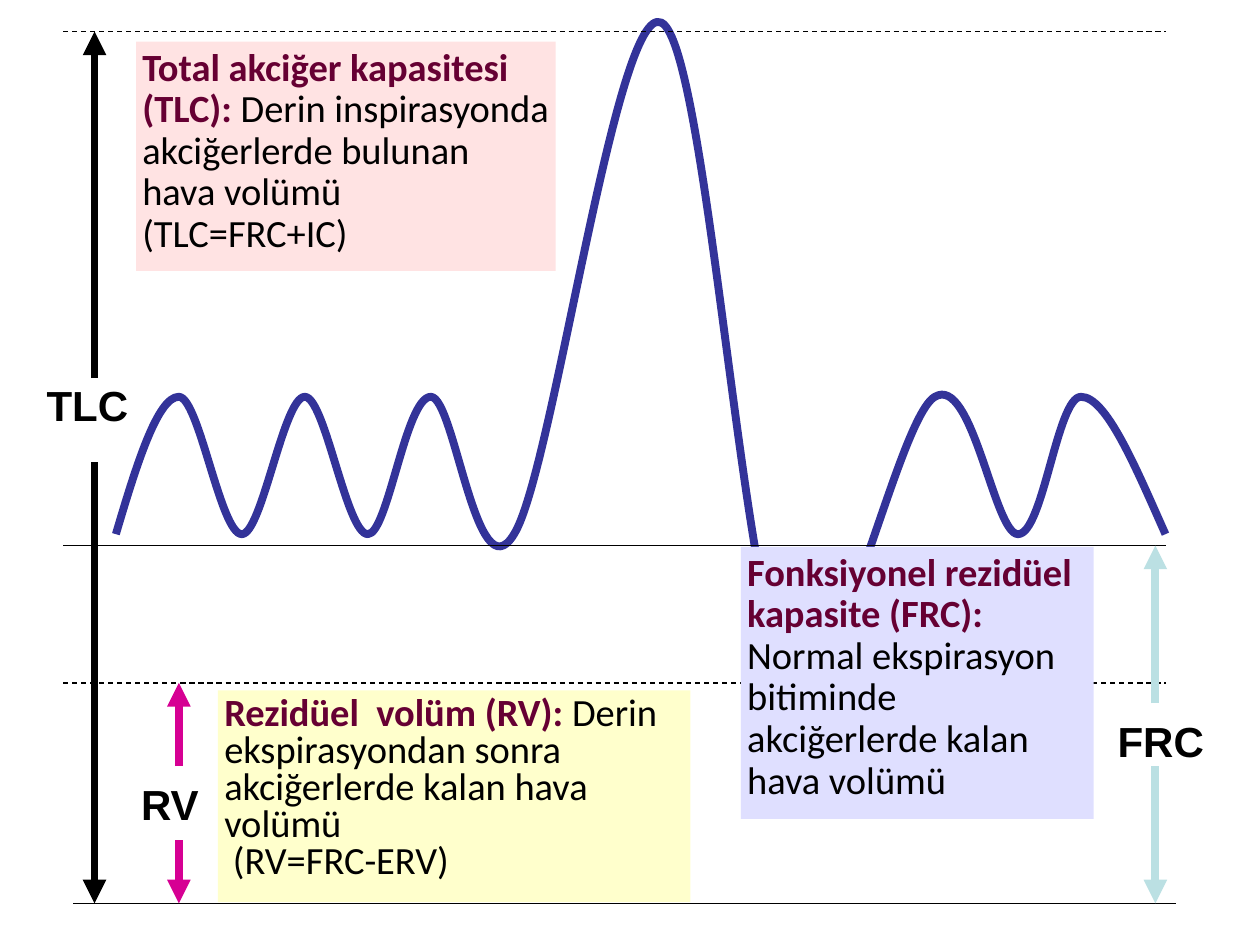
from lxml.etree import SubElement
from pptx import Presentation
from pptx.dml.color import RGBColor
from pptx.enum.dml import MSO_LINE
from pptx.enum.shapes import MSO_CONNECTOR, MSO_SHAPE
from pptx.enum.text import MSO_ANCHOR, MSO_AUTO_SIZE, PP_ALIGN
from pptx.oxml.ns import qn
from pptx.util import Inches, Pt

BLACK = RGBColor(0x00, 0x00, 0x00)
NAVY = RGBColor(0x33, 0x33, 0x99)
WINE = RGBColor(0x66, 0x00, 0x33)
MAGENTA = RGBColor(0xD6, 0x00, 0x93)
TEAL = RGBColor(0xBB, 0xE0, 0xE3)
PINK = RGBColor(0xFF, 0xE3, 0xE3)
YELLOW = RGBColor(0xFF, 0xFF, 0xCC)
LILAC = RGBColor(0xDF, 0xDF, 0xFF)

# Lung levels, from full to empty
FULL, REST, RESID, EMPTY = 0.25, 4.33, 5.42, 7.17

# Start of the breathing curve, then two controls and an end per segment
START = (0.92, 4.24)
WAVE = [
    (1.08, 3.7), (1.25, 3.15), (1.42, 3.15),
    (1.58, 3.15), (1.75, 4.24), (1.92, 4.24),
    (2.08, 4.24), (2.25, 3.15), (2.42, 3.15),
    (2.58, 3.15), (2.75, 4.24), (2.92, 4.24),
    (3.08, 4.24), (3.22, 3.15), (3.42, 3.15),
    (3.61, 3.15), (3.78, 4.74), (4.08, 4.24),
    (4.39, 3.75), (4.89, 0), (5.25, 0.18),
    (5.61, 0.36), (5.89, 4.84), (6.25, 5.34),
    (6.61, 5.83), (7.11, 3.33), (7.42, 3.15),
    (7.72, 2.97), (7.89, 4.24), (8.08, 4.24),
    (8.28, 4.24), (8.39, 3.15), (8.58, 3.15),
    (8.78, 3.15), (9.01, 3.7), (9.25, 4.24),
]


def add_curve(slide):
    # The builder rounds to whole units, so points are given in EMU
    start, *wave = [(Inches(x), Inches(y)) for x, y in (START, *WAVE)]
    pen = slide.shapes.build_freeform(*start)
    pen.add_line_segments(wave, close=False)
    curve = pen.convert_to_shape()
    curve.shadow.inherit = False
    curve.fill.background()
    curve.line.color.rgb = NAVY
    curve.line.width = Pt(4.5)
    # Join each three straight steps into one Bezier segment
    steps = list(curve.element.iter(qn("a:lnTo")))
    for i in range(0, len(steps), 3):
        bezier = SubElement(steps[i].getparent(), qn("a:cubicBezTo"))
        for step in steps[i:i + 3]:
            bezier.append(step[0])
            step.getparent().remove(step)


def add_line(slide, start, end, color=BLACK, width=0.75, dash=False, arrow=False):
    ends = [Inches(v) for v in (*start, *end)]
    line = slide.shapes.add_connector(MSO_CONNECTOR.STRAIGHT, *ends)
    line.line.color.rgb = color
    line.line.width = Pt(width)
    if dash:
        line.line.dash_style = MSO_LINE.DASH
    props = line.element.spPr
    if arrow:
        SubElement(props.find(qn("a:ln")), qn("a:tailEnd"), type="triangle")
    SubElement(props, qn("a:effectLst"))


def set_frame(frame, wrap):
    frame.margin_left = frame.margin_right = Inches(0.05)
    frame.margin_top = frame.margin_bottom = Inches(0.05)
    frame.vertical_anchor = MSO_ANCHOR.TOP
    frame.word_wrap = wrap
    frame.auto_size = MSO_AUTO_SIZE.SHAPE_TO_FIT_TEXT


def add_label(slide, text, left, top, width):
    box = slide.shapes.add_textbox(*map(Inches, (left, top, width, 0.48)))
    set_frame(box.text_frame, False)
    para = box.text_frame.paragraphs[0]
    para.text = text
    para.font.name = "Arial"
    para.font.size = Pt(24)
    para.font.bold = True
    para.font.color.rgb = BLACK


def add_span(slide, x, top, bottom, gap, color):
    """Two arrows that point away from the gap left for a label."""
    for start, end in zip(gap, (top, bottom)):
        add_line(slide, (x, start), (x, end), color, 4.5, arrow=True)


def add_note(slide, place, fill, spacing, *paras):
    box = slide.shapes.add_shape(MSO_SHAPE.RECTANGLE, *map(Inches, place))
    box.shadow.inherit = False
    box.fill.solid()
    box.fill.fore_color.rgb = fill
    box.line.fill.background()
    frame = box.text_frame
    set_frame(frame, True)
    for i, (term, text) in enumerate(paras):
        para = frame.add_paragraph() if i else frame.paragraphs[0]
        para.alignment = PP_ALIGN.LEFT
        para.line_spacing = spacing
        para.font.name = "Calibri"
        para.font.size = Pt(22)
        para.font.color.rgb = BLACK
        if term:
            head = para.add_run()
            head.text = term
            head.font.bold = True
            head.font.color.rgb = WINE
        para.add_run().text = text


def main():
    prs = Presentation()
    prs.slide_width, prs.slide_height = Inches(10), Inches(7.5)
    slide = prs.slides.add_slide(prs.slide_layouts[6])

    # Curve and level lines
    add_curve(slide)
    for y, dash in ((FULL, True), (REST, False), (RESID, True)):
        add_line(slide, (0.5, y), (9.25, y), dash=dash)
    add_line(slide, (0.58, EMPTY), (9.33, EMPTY))

    # Total capacity
    add_span(slide, 0.75, FULL, EMPTY, (3, 3.67), BLACK)
    add_label(slide, "TLC", 0.32, 2.96, 0.76)
    add_note(slide, (1.08, 0.33, 3.33, 1.82), PINK, 0.9,
             ("Total akciğer kapasitesi (TLC): ",
              "Derin inspirasyonda akciğerlerde bulunan hava volümü (TLC=FRC+IC)"))

    # Residual volume
    add_span(slide, 1.42, RESID, EMPTY, (6.08, 6.67), MAGENTA)
    add_label(slide, "RV", 1.07, 6.13, 0.57)
    add_note(slide, (1.73, 5.48, 3.75, 1.68), YELLOW, 0.8,
             ("Rezidüel  volüm (RV): ",
              "Derin ekspirasyondan sonra akciğerlerde kalan hava volümü"),
             ("", " (RV=FRC-ERV)"))

    # Functional residual capacity
    add_span(slide, 9.17, REST, EMPTY, (5.58, 6.08), TEAL)
    add_label(slide, "FRC", 8.82, 5.63, 0.8)
    add_note(slide, (5.88, 4.34, 2.8, 2.16), LILAC, 0.9,
             ("Fonksiyonel rezidüel kapasite (FRC):",
              " Normal ekspirasyon bitiminde akciğerlerde kalan hava volümü"))

    prs.save("out.pptx")


if __name__ == "__main__":
    main()
